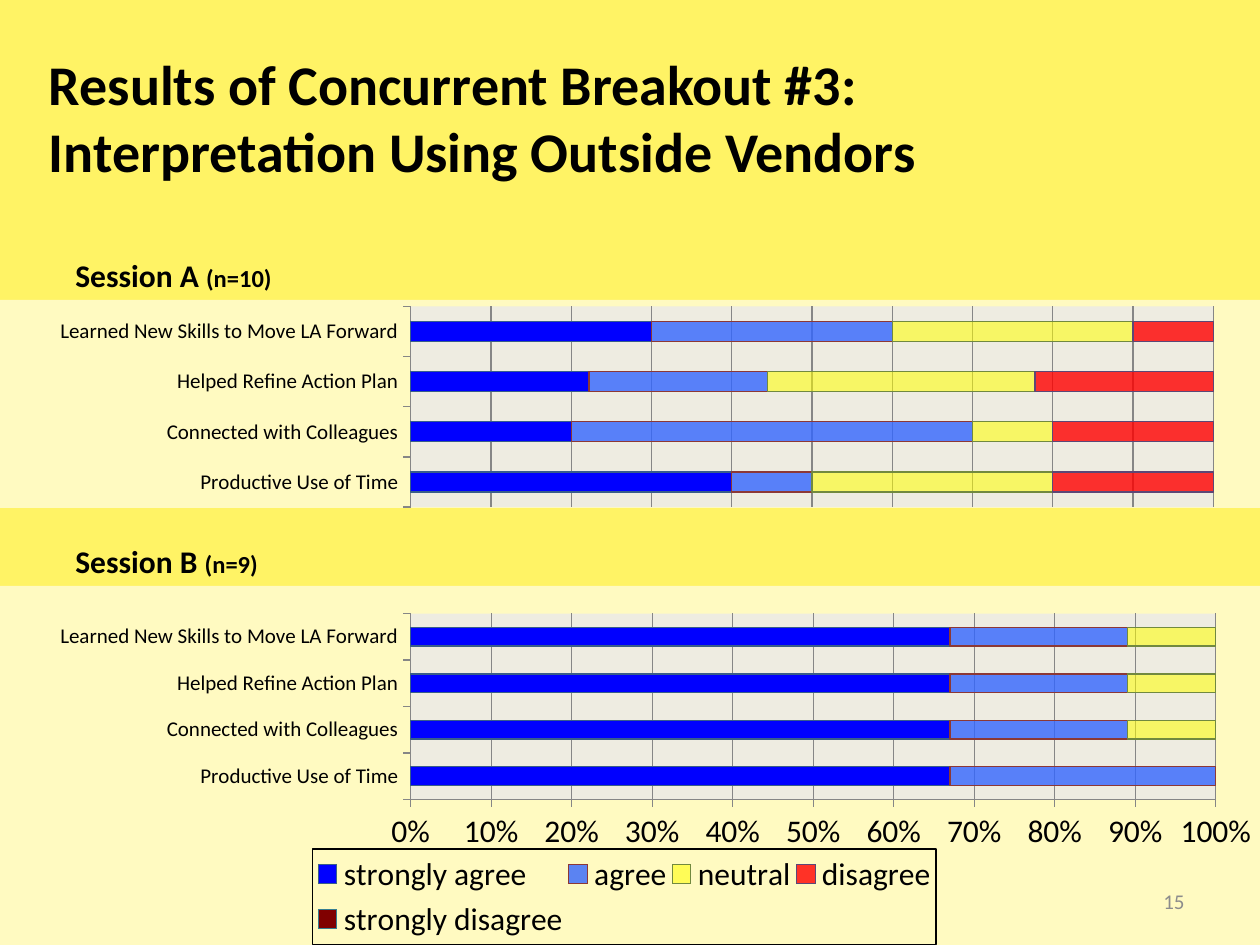
"""Build the slide of breakout survey results with two stacked bar charts."""
from pptx import Presentation
from pptx.chart.data import CategoryChartData
from pptx.dml.color import RGBColor
from pptx.enum.chart import XL_CHART_TYPE, XL_LEGEND_POSITION, XL_TICK_MARK
from pptx.enum.text import MSO_ANCHOR, PP_ALIGN
from pptx.oxml import parse_xml
from pptx.oxml.ns import nsdecls
from pptx.util import Pt

FONT = "Calibri"
TITLE = "Results of Concurrent Breakout #3:\nInterpretation Using Outside Vendors"
CATEGORIES = ["Productive Use of Time", "Connected with Colleagues",
              "Helped Refine Action Plan", "Learned New Skills to Move LA Forward"]
ANSWERS = [
    ("strongly agree", "0000FF", 100, "385D8A"),
    ("agree", "3366FF", 80, "8C3836"),
    ("neutral", "FFFF00", 55, "71893F"),
    ("disagree", "FF0000", 80, "5C4776"),
    ("strongly disagree", "800000", 100, "357D91"),
]
SESSIONS = [
    dict(label="Session B ", count="(n=9)", label_top=306,
         frame=(0, 334.8, 720, 205.2), plot=(0.326, 0.077, 0.639, 0.518),
         legend=(0.248, 0.733, 0.495, 0.265),
         values=[(67, 67, 67, 67), (33, 22, 22, 22), (0, 11, 11, 11), (0,) * 4, (0,) * 4]),
    dict(label="Session A ", count="(n=10)", label_top=142.6,
         frame=(0, 171.4, 720, 118.8), plot=(0.326, 0.031, 0.637, 0.966), legend=None,
         values=[(40, 20, 22, 30), (10, 50, 22, 30), (30, 10, 33, 30), (20, 20, 22, 10), (0,) * 4]),
]


def color(value):
    return RGBColor.from_string(value)


def add_text(page, frame, runs, tint="000000", bold=True,
             align=PP_ALIGN.LEFT, anchor=MSO_ANCHOR.TOP):
    box = page.shapes.add_textbox(*map(Pt, frame)).text_frame
    box.word_wrap = True
    box.vertical_anchor = anchor
    para = box.paragraphs[0]
    para.alignment = align
    for text, size in runs:
        for index, line in enumerate(text.split("\n")):
            if index:
                para.add_line_break()
            span = para.add_run()
            span.text = line
            span.font.name, span.font.size, span.font.bold = FONT, Pt(size), bold
            span.font.color.rgb = color(tint)


def shape_format(fill=None, line=None):
    paint = '<a:solidFill><a:srgbClr val="{}"/></a:solidFill>'
    inside = paint.format(fill) if fill else "<a:noFill/>"
    border = paint.format(line) if line else "<a:noFill/>"
    return parse_xml(f'<c:spPr {nsdecls("c", "a")}>{inside}<a:ln w="9525">{border}</a:ln></c:spPr>')


def set_layout(parent, position, bounds, inner=False):
    for old in parent.findall(parent.tag.split("}")[0] + "}layout"):
        parent.remove(old)
    target = '<c:layoutTarget val="inner"/>' if inner else ""
    modes = '<c:xMode val="edge"/><c:yMode val="edge"/>'
    sizes = "".join(f'<c:{name} val="{value}"/>' for name, value in zip("xywh", bounds))
    parent.insert(position, parse_xml(
        f'<c:layout {nsdecls("c")}><c:manualLayout>{target}{modes}{sizes}</c:manualLayout></c:layout>'))


def style_axes(chart, show_values):
    for axis in (chart.category_axis, chart.value_axis):
        axis.major_tick_mark = XL_TICK_MARK.OUTSIDE
        axis.minor_tick_mark = XL_TICK_MARK.NONE
        axis.format.line.color.rgb = color("868686")
        axis.format.line.width = Pt(0.75)
    chart.category_axis.tick_labels.font.size = Pt(12)
    scale = chart.value_axis
    scale.minimum_scale, scale.maximum_scale, scale.major_unit = 0, 1, 0.1
    scale.has_major_gridlines = True
    scale.major_gridlines.format.line.color.rgb = color("868686")
    scale.major_gridlines.format.line.width = Pt(0.75)
    scale.tick_labels.number_format = "0%"
    scale.tick_labels.number_format_is_linked = False
    scale.visible = show_values


def add_results(page, session):
    data = CategoryChartData(number_format="0")
    data.categories = CATEGORIES
    for (name, *_), values in zip(ANSWERS, session["values"]):
        data.add_series(name, values)
    chart = page.shapes.add_chart(
        XL_CHART_TYPE.BAR_STACKED_100, *map(Pt, session["frame"]), data).chart
    chart.has_title = False
    chart.font.name, chart.font.size = FONT, Pt(18)
    chart.font.color.rgb = color("000000")
    plot = chart.plots[0]
    plot.gap_width, plot.overlap, plot.vary_by_categories = 150, 100, False
    style_axes(chart, bool(session["legend"]))
    for series, (_, fill, opacity, line) in zip(plot.series, ANSWERS):
        series.format.fill.solid()
        series.format.fill.fore_color.rgb = color(fill)
        series.format.line.color.rgb = color(line)
        series.format.line.width = Pt(0.75)
        if opacity < 100:
            paint = series._element.xpath("./c:spPr/a:solidFill/a:srgbClr")[0]
            paint.append(parse_xml(f'<a:alpha {nsdecls("a")} val="{opacity * 1000}"/>'))
    space = chart._chartSpace
    space.xpath("./c:chart")[0].addnext(shape_format("FFFAC1"))
    area = space.xpath("./c:chart/c:plotArea")[0]
    set_layout(area, 0, session["plot"], inner=True)
    area.append(shape_format("EEECE1"))
    chart.has_legend = bool(session["legend"])
    if session["legend"]:
        chart.legend.position = XL_LEGEND_POSITION.BOTTOM
        chart.legend.include_in_layout = False
        legend = space.xpath("./c:chart/c:legend")[0]
        set_layout(legend, 1, session["legend"])
        legend.xpath("./c:overlay")[0].addnext(shape_format(line="000000"))


deck = Presentation()
deck.slide_width, deck.slide_height = Pt(720), Pt(540)
page = deck.slides.add_slide(deck.slide_layouts[6])
page.background.fill.solid()
page.background.fill.fore_color.rgb = color("FFF365")
add_text(page, (20.9, 21.6, 689, 90), [(TITLE, 32)], anchor=MSO_ANCHOR.MIDDLE)
for session in SESSIONS:
    add_results(page, session)
for session in SESSIONS:
    add_text(page, (36, session["label_top"], 203.8, 28.8),
             [(session["label"], 18), (session["count"], 14)])
add_text(page, (516.2, 500.4, 167.8, 28.8), [("15", 12)], tint="8C8C8C", bold=False,
         align=PP_ALIGN.RIGHT, anchor=MSO_ANCHOR.MIDDLE)
deck.save("out.pptx")
